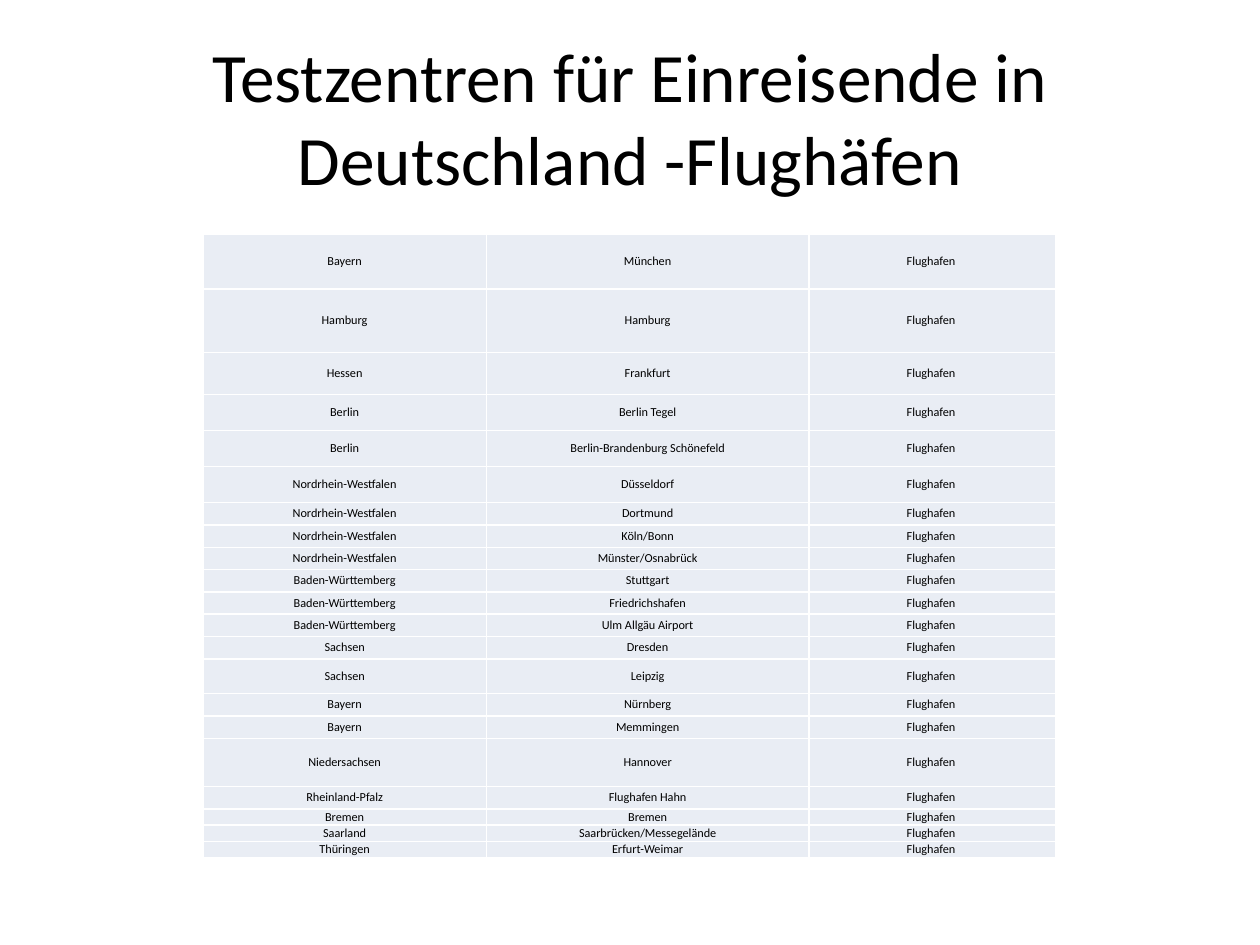
from dataclasses import dataclass

from lxml import etree
from pptx import Presentation
from pptx import util as u
from pptx.dml.color import RGBColor
from pptx.enum import text
from pptx.oxml import ns


@dataclass(frozen=True)
class Theme:
    font: str = "Calibri"
    ink: str = "000000"
    cell: str = "E9EDF4"
    border: str = "FFFFFF"
    border_width: float = 1
    title_size: float = 39.6
    cell_size: float = 7


def write(frame, content, *, font, size, color, align=text.PP_ALIGN.CENTER):
    paragraph = frame.paragraphs[0]
    paragraph.alignment = align
    run = paragraph.add_run()
    run.text = content
    run.font.name = font
    run.font.size = u.Pt(size)
    run.font.color.rgb = RGBColor.from_string(color)


class SlideBuilder:
    def __init__(self, slide, theme):
        self.slide = slide
        self.theme = theme

    def title(self, content, left, top, width, height):
        box = self.slide.shapes.add_textbox(*map(u.Inches, (left, top, width, height)))
        frame = box.text_frame
        frame.word_wrap = True
        frame.vertical_anchor = text.MSO_ANCHOR.MIDDLE
        write(frame, content, font=self.theme.font,
              size=self.theme.title_size, color=self.theme.ink)

    def table(self, rows, left, top, widths, heights, total_height):
        scale = total_height / sum(heights)
        shape = self.slide.shapes.add_table(
            len(rows), len(widths),
            *map(u.Inches, (left, top, sum(widths), total_height)))
        table = shape.table
        table.first_row = table.horz_banding = False
        for column, width in zip(table.columns, widths):
            column.width = u.Inches(width)
        for row, height, values in zip(table.rows, heights, rows):
            row.height = u.Inches(height * scale)
            for cell, value in zip(row.cells, values):
                self.cell(cell, value)

    def cell(self, cell, value):
        cell.margin_left = cell.margin_right = 0
        cell.margin_top = cell.margin_bottom = 0
        cell.vertical_anchor = text.MSO_ANCHOR.MIDDLE
        self.borders(cell)
        cell.fill.solid()
        cell.fill.fore_color.rgb = RGBColor.from_string(self.theme.cell)
        write(cell.text_frame, value, font=self.theme.font,
              size=self.theme.cell_size, color=self.theme.ink)

    def borders(self, cell):
        properties = cell._tc.get_or_add_tcPr()
        for side in ("lnL", "lnR", "lnT", "lnB"):
            line = etree.SubElement(properties, ns.qn(f"a:{side}"),
                                    w=str(u.Pt(self.theme.border_width)))
            fill = etree.SubElement(line, ns.qn("a:solidFill"))
            etree.SubElement(fill, ns.qn("a:srgbClr"), val=self.theme.border)


AIRPORTS = [
    ("Bayern", "München", 0.44),
    ("Hamburg", "Hamburg", 0.51),
    ("Hessen", "Frankfurt", 0.34),
    ("Berlin", "Berlin Tegel", 0.29),
    ("Berlin", "Berlin-Brandenburg Schönefeld", 0.29),
    ("Nordrhein-Westfalen", "Düsseldorf", 0.29),
    ("Nordrhein-Westfalen", "Dortmund", 0.18),
    ("Nordrhein-Westfalen", "Köln/Bonn", 0.18),
    ("Nordrhein-Westfalen", "Münster/Osnabrück", 0.18),
    ("Baden-Württemberg", "Stuttgart", 0.18),
    ("Baden-Württemberg", "Friedrichshafen", 0.18),
    ("Baden-Württemberg", "Ulm Allgäu Airport", 0.18),
    ("Sachsen", "Dresden", 0.18),
    ("Sachsen", "Leipzig", 0.28),
    ("Bayern", "Nürnberg", 0.18),
    ("Bayern", "Memmingen", 0.18),
    ("Niedersachsen", "Hannover", 0.39),
    ("Rheinland-Pfalz", "Flughafen Hahn", 0.18),
    ("Bremen", "Bremen", 0.13),
    ("Saarland", "Saarbrücken/Messegelände", 0.13),
    ("Thüringen", "Erfurt-Weimar", 0.13),
]


def main():
    presentation = Presentation()
    presentation.slide_width = u.Inches(10)
    presentation.slide_height = u.Inches(7.5)
    slide = presentation.slides.add_slide(presentation.slide_layouts[6])
    builder = SlideBuilder(slide, Theme())
    builder.title("Testzentren für Einreisende in Deutschland -Flughäfen",
                  0.5, 0.3, 9, 1.25)
    builder.table([(state, city, "Flughafen ") for state, city, _ in AIRPORTS],
                  left=1.61, top=1.86, widths=(2.25, 2.56, 1.96),
                  heights=[height for *_, height in AIRPORTS], total_height=4.95)
    presentation.save("out.pptx")


if __name__ == "__main__":
    main()
